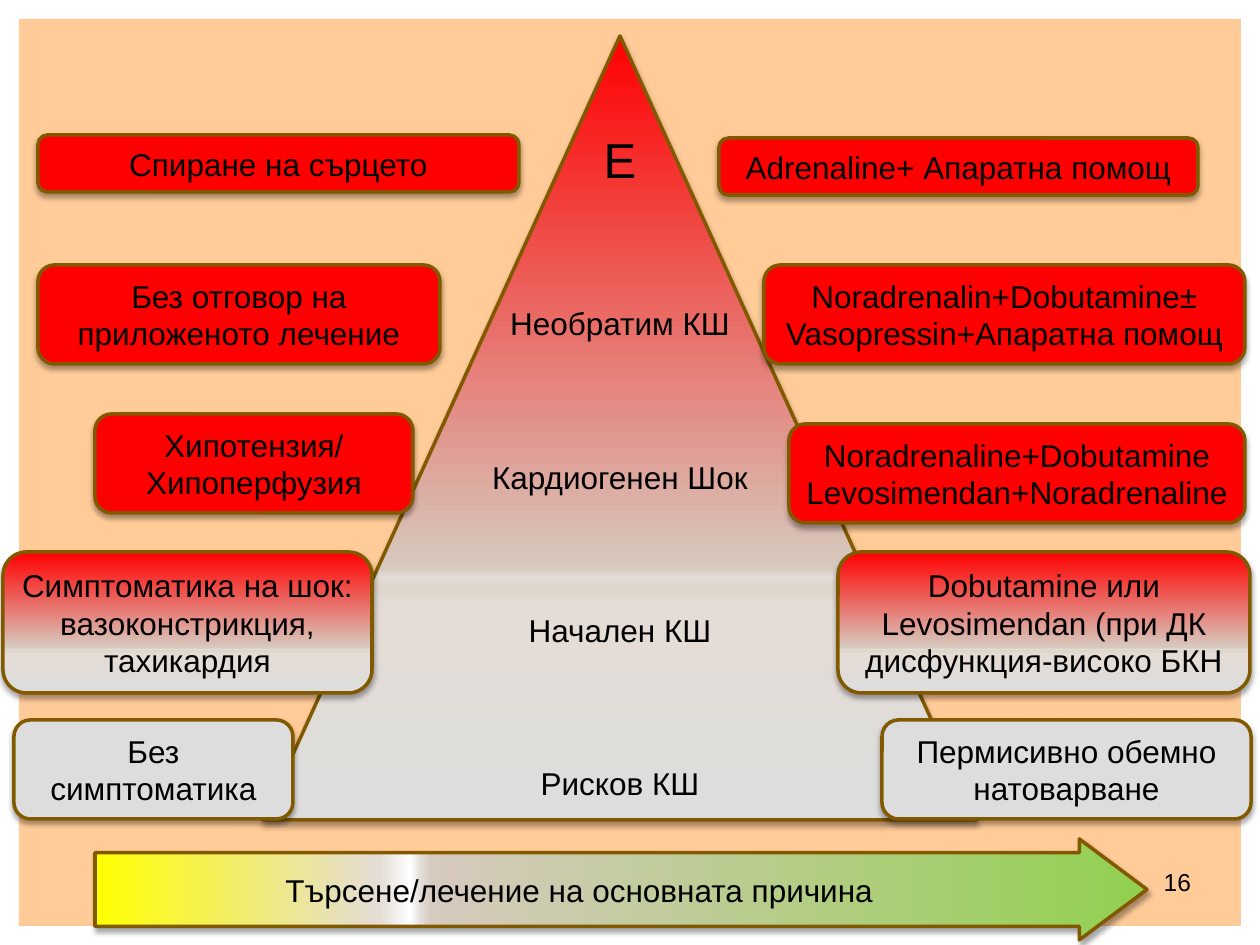
from lxml import etree
from pptx import Presentation
from pptx import util as u
from pptx.dml.color import RGBColor
from pptx.enum import shapes, text
from pptx.oxml import ns

PX = 914400 / 126
PEACH = RGBColor(0xFF, 0x99, 0x33)
RED = RGBColor(0xFF, 0x00, 0x00)
GREY = RGBColor(0xDD, 0xDD, 0xDD)
YELLOW = RGBColor(0xFF, 0xFF, 0x00)
GREEN = RGBColor(0x92, 0xD0, 0x50)
WHITE = RGBColor(0xFF, 0xFF, 0xFF)
SILVER = RGBColor(0xDF, 0xD6, 0xCE)
SAND = RGBColor(0xE4, 0xDC, 0xD5)
PALE = RGBColor(0xE3, 0xDC, 0xD6)
TAUPE = RGBColor(0xD7, 0xCA, 0xBF)
BROWN = RGBColor(0x80, 0x59, 0x00)
BLACK = RGBColor(0x00, 0x00, 0x00)

SEVERITY = (90, GREY, SILVER, RED)
SEARCH = (0, YELLOW, WHITE, GREEN)


def add_shape(kind, box, fill):
    sp = s.shapes.add_shape(kind, *[u.Emu(round(v * PX)) for v in box])
    sp.shadow.inherit = False
    spPr = sp._element.spPr
    if isinstance(fill, RGBColor):
        sp.fill.solid()
        sp.fill.fore_color.rgb = fill
    else:
        angle, start, glow, end = fill
        sp.fill.gradient()
        sp.fill.gradient_angle = angle
        stops = spPr.find(".//" + ns.qn("a:gsLst"))
        for old in list(stops):
            stops.remove(old)
        for pos, color in [(0, start), (27, SAND), (30, glow), (31, PALE), (32, TAUPE), (100, end)]:
            gs = etree.SubElement(stops, ns.qn("a:gs"), pos=str(pos * 1000))
            etree.SubElement(gs, ns.qn("a:srgbClr"), val=str(color))
    sp.line.color.rgb = BROWN
    sp.line.width = u.Pt(2)
    shadow = etree.SubElement(spPr.find(ns.qn("a:effectLst")), ns.qn("a:outerShdw"),
                              blurRad="38100", dist="22860", dir="5400000", rotWithShape="0")
    color = etree.SubElement(shadow, ns.qn("a:srgbClr"), val=str(BLACK))
    etree.SubElement(color, ns.qn("a:alpha"), val="35000")
    return sp


def write(sp, words, size=18, align=text.PP_ALIGN.CENTER, anchor=text.MSO_ANCHOR.MIDDLE):
    tf = sp.text_frame
    tf.word_wrap = True
    tf.vertical_anchor = anchor
    tf.margin_left = tf.margin_right = tf.margin_top = tf.margin_bottom = u.Emu(round(6 * PX))
    tf.text = words
    for p in tf.paragraphs:
        p.alignment = align
        p.font.size = u.Pt(size)
        p.font.name = "Arial"
        p.font.color.rgb = BLACK
    return tf


prs = Presentation()
prs.slide_width, prs.slide_height = u.Inches(10), u.Inches(7.5)
s = prs.slides.add_slide(prs.slide_layouts[6])

panel = s.shapes.add_shape(shapes.MSO_SHAPE.RECTANGLE, *[u.Emu(round(v * PX)) for v in (19, 19, 1222, 907)])
panel.shadow.inherit = False
panel.line.fill.background()
panel.fill.solid()
panel.fill.fore_color.rgb = PEACH
tint = panel._element.spPr.find(".//" + ns.qn("a:srgbClr"))
etree.SubElement(tint, ns.qn("a:alpha"), val="50000")

add_shape(shapes.MSO_SHAPE.ISOSCELES_TRIANGLE, (263, 36, 714, 784), SEVERITY)

number = s.shapes.add_textbox(*[u.Emu(round(v * PX)) for v in (1155, 861, 42, 40)])
write(number, "16", 14, text.PP_ALIGN.RIGHT, text.MSO_ANCHOR.TOP)

stages = s.shapes.add_textbox(*[u.Emu(round(v * PX)) for v in (432, 124, 376, 691)])
tf = write(stages, "E\nНеобратим КШ\nКардиогенен Шок\nНачален КШ\nРисков КШ", anchor=text.MSO_ANCHOR.TOP)
tf.paragraphs[0].font.size = u.Pt(28)
for p in tf.paragraphs[1:]:
    p.space_before = u.Pt(66)

boxes = [
    (719, 138, 479, 57, RED, "Adrenaline+ Апаратна помощ"),
    (764, 265, 481, 99, RED, "Noradrenalin+Dobutaminе±\nVasopressin+Апаратна помощ"),
    (882, 720, 369, 99, GREY, "Пермисивно обемно\nнатоварване"),
    (789, 424, 456, 99, RED, "Noradrenaline+Dobutaminе\nLevosimendan+Noradrenaline"),
    (838, 552, 412, 141, SEVERITY, "Dobutaminе или Levosimendan (при ДК дисфункция-високо БКН"),
    (38, 135, 481, 57, RED, "Спиране на сърцето"),
    (38, 265, 402, 99, RED, "Без отговор на приложеното лечение"),
    (95, 414, 318, 99, RED, "Хипотензия/\nХипоперфузия"),
    (3, 552, 369, 141, SEVERITY, "Симптоматика на шок: вазоконстрикция, тахикардия"),
    (14, 720, 279, 99, GREY, "Без симптоматика"),
]
for *box, fill, words in boxes:
    write(add_shape(shapes.MSO_SHAPE.ROUNDED_RECTANGLE, box, fill), words)

arrow = add_shape(shapes.MSO_SHAPE.RIGHT_ARROW, (95, 839, 1052, 101), SEARCH)
arrow.adjustments[0], arrow.adjustments[1] = 0.73, 0.67
tf = write(arrow, "Търсене/лечение на основната причина")
tf.margin_right = u.Emu(round(40 * PX))

prs.save("out.pptx")
